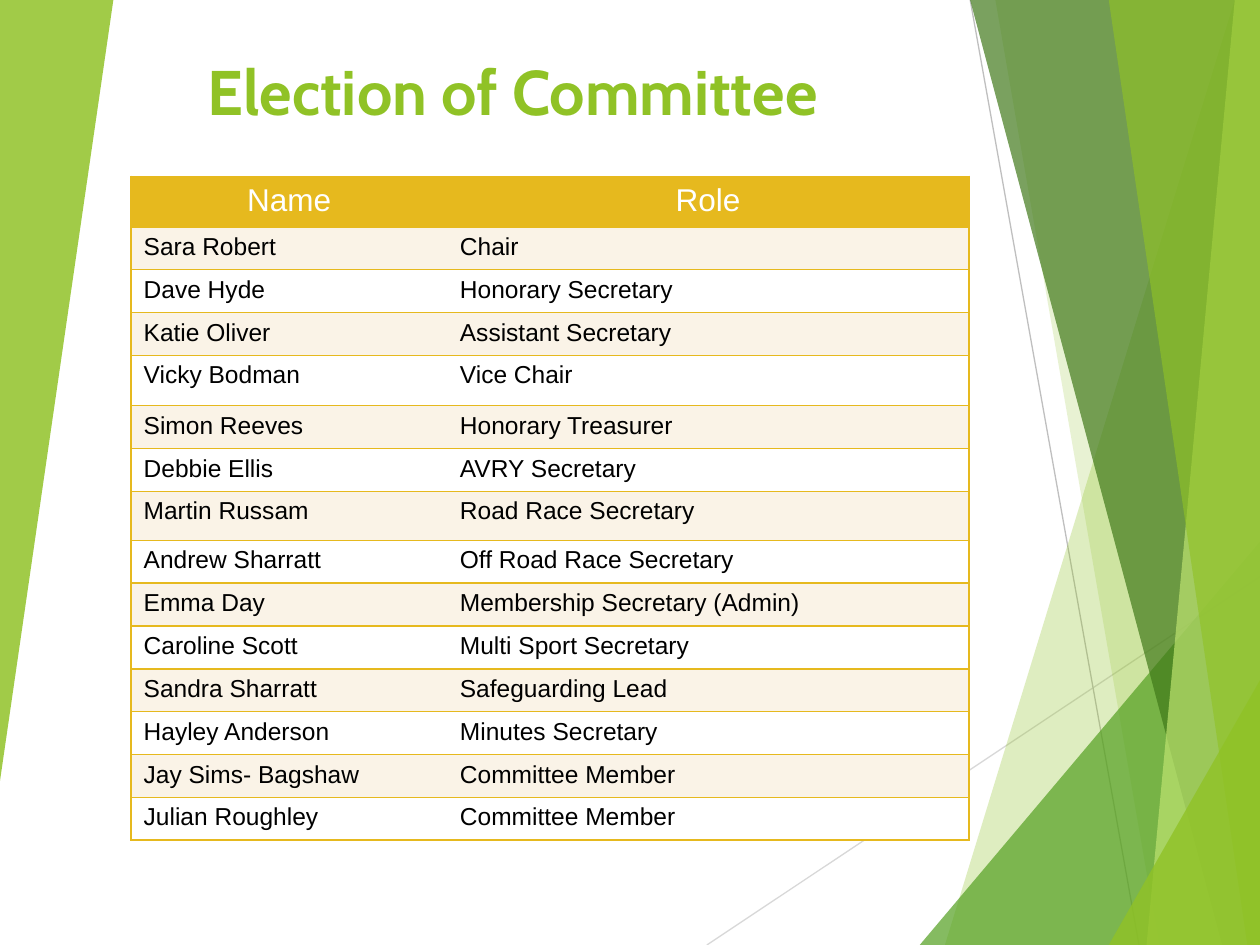
import lxml.etree
import pptx
import pptx.dml.color
import pptx.enum.shapes
import pptx.enum.text
import pptx.oxml.ns
import pptx.util

COLS, ROWS = 100, 75
UNIT = pptx.util.Inches(0.1)
GREEN, GOLD, CREAM, WHITE = "90C226", "E6B91E", "FAF3E7", "FFFFFF"
ALIGN = pptx.enum.text.PP_ALIGN

TITLE = {"size": pptx.util.Pt(36), "name": "Cabin", "bold": True}
HEAD = {"size": pptx.util.Pt(18), "name": "Arial", "bold": False}
BODY = {"size": pptx.util.Pt(14), "name": "Arial", "bold": False}

# Ends of each thin line: from x, y to x, y
LINES = [
    ("D8D8D8", (56.1, 75, 100.1, 45.7)),
    ("BFBFBF", (77, 0, 90.4, 75)),
]
# Fill, opacity in percent, corners
FACETS = [
    (GREEN, 29, [(97.5, 0), (75.4, 75), (100.2, 75.1), (100.1, 0.1)]),
    (GREEN, 20, [(78.8, -0.1), (91.9, 75), (100.1, 75), (100.1, -0.1)]),
    ("54A021", 71, [(72.6, 75), (100, 42.9), (100.1, 75)]),
    ("3F7818", 69, [(76.7, -0.1), (97, 75), (100.1, 74.9), (100.1, -0.1)]),
    ("BFE471", 69, [(98.1, -0.1), (90.7, 75), (100.1, 75), (100, -0.1)]),
    (GREEN, 64, [(88.3, -0.1), (98.6, 75), (100, 75), (99.8, -0.1)]),
    (GREEN, 80, [(88.1, 75), (100.1, 53.5), (100.1, 74.9)]),
    (GREEN, 84, [(-0.1, 0), (9.4, -0.1), (9.4, 0.1), (-0.1, 62.2)]),
]
PEOPLE = [
    ("Name", "Role"),
    ("Sara Robert", "Chair"),
    ("Dave Hyde", "Honorary Secretary"),
    ("Katie Oliver", "Assistant Secretary"),
    ("Vicky Bodman", "Vice Chair"),
    ("Simon Reeves", "Honorary Treasurer"),
    ("Debbie Ellis", "AVRY Secretary"),
    ("Martin Russam", "Road Race Secretary"),
    ("Andrew Sharratt", "Off Road Race Secretary"),
    ("Emma Day", "Membership Secretary (Admin)"),
    ("Caroline Scott", "Multi Sport Secretary"),
    ("Sandra Sharratt", "Safeguarding Lead"),
    ("Hayley Anderson", "Minutes Secretary"),
    ("Jay Sims- Bagshaw", "Committee Member"),
    ("Julian Roughley", "Committee Member"),
]
WIDTHS = (25.1, 41.4)
HEIGHT = 3.4
TALL = {0: 3.6, 4: 4, 7: 3.9}


def color(code):
    return pptx.dml.color.RGBColor.from_string(code)


def grid(*units):
    """Turn grid units into slide lengths."""
    return [round(unit * UNIT) for unit in units]


def child(parent, tag, **attrs):
    return lxml.etree.SubElement(parent, pptx.oxml.ns.qn(tag), attrs)


class Deck:
    """Holds the style and the current slide."""

    def __init__(self):
        self.show = pptx.Presentation()
        self.show.slide_width, self.show.slide_height = grid(COLS, ROWS)
        self.slide = self.show.slides.add_slide(self.show.slide_layouts[6])
        self.shapes = self.slide.shapes

    def line(self, tint, ends):
        kind = pptx.enum.shapes.MSO_CONNECTOR.STRAIGHT
        line = self.shapes.add_connector(kind, *grid(*ends))
        line.line.color.rgb = color(tint)
        line.line.width = pptx.util.Pt(0.75)
        child(line._element.spPr, "a:effectLst")

    def facet(self, tint, alpha, points):
        start, *rest = points
        pen = self.shapes.build_freeform(*start, scale=UNIT)
        pen.add_line_segments(rest, close=True)
        shape = pen.convert_to_shape()
        shape.shadow.inherit = False
        shape.line.fill.background()
        shape.fill.solid()
        shape.fill.fore_color.rgb = color(tint)
        tone = shape._element.spPr.find(".//" + pptx.oxml.ns.qn("a:srgbClr"))
        child(tone, "a:alpha", val=str(alpha * 1000))

    def label(self, frame, text, tint, style, align=ALIGN.LEFT):
        para = frame.paragraphs[0]
        para.alignment = align
        run = para.add_run()
        run.text = text
        for key, value in style.items():
            setattr(run.font, key, value)
        run.font.color.rgb = color(tint)

    def title(self, text, box):
        frame = self.shapes.add_textbox(*grid(*box)).text_frame
        frame.word_wrap = True
        frame.vertical_anchor = pptx.enum.text.MSO_ANCHOR.BOTTOM
        self.label(frame, text, GREEN, TITLE)

    def border(self, cell, sides):
        """Rule the given sides in gold and clear the others."""
        props = cell._tc.get_or_add_tcPr()
        for side in "LRTB":
            edge = child(props, "a:ln" + side, w=str(pptx.util.Pt(1)))
            if side in sides:
                child(child(edge, "a:solidFill"), "a:srgbClr", val=GOLD)
            else:
                child(edge, "a:noFill")

    def table(self, data, left, top):
        highs = [TALL.get(row, HEIGHT) for row in range(len(data))]
        box = grid(left, top, sum(WIDTHS), sum(highs))
        table = self.shapes.add_table(len(data), len(WIDTHS), *box).table
        for col, width in zip(table.columns, grid(*WIDTHS)):
            col.width = width
        for row, high in zip(table.rows, grid(*highs)):
            row.height = high
        for row, texts in enumerate(data):
            if row == 0:
                fill, look = GOLD, (WHITE, HEAD, ALIGN.CENTER)
            else:
                fill = CREAM if row % 2 else WHITE
                look = ("000000", BODY)
            for col, text in enumerate(texts):
                cell = table.cell(row, col)
                self.border(cell, "RTB" if col else "LTB")
                cell.fill.solid()
                cell.fill.fore_color.rgb = color(fill)
                self.label(cell.text_frame, text, *look)


def main():
    deck = Deck()
    for line in LINES:
        deck.line(*line)
    for facet in FACETS:
        deck.facet(*facet)
    deck.title("Election of Committee", (15.5, 0.4, 84.3, 10.3))
    deck.table(PEOPLE, 10.4, 14)
    deck.show.save("out.pptx")


if __name__ == "__main__":
    main()
